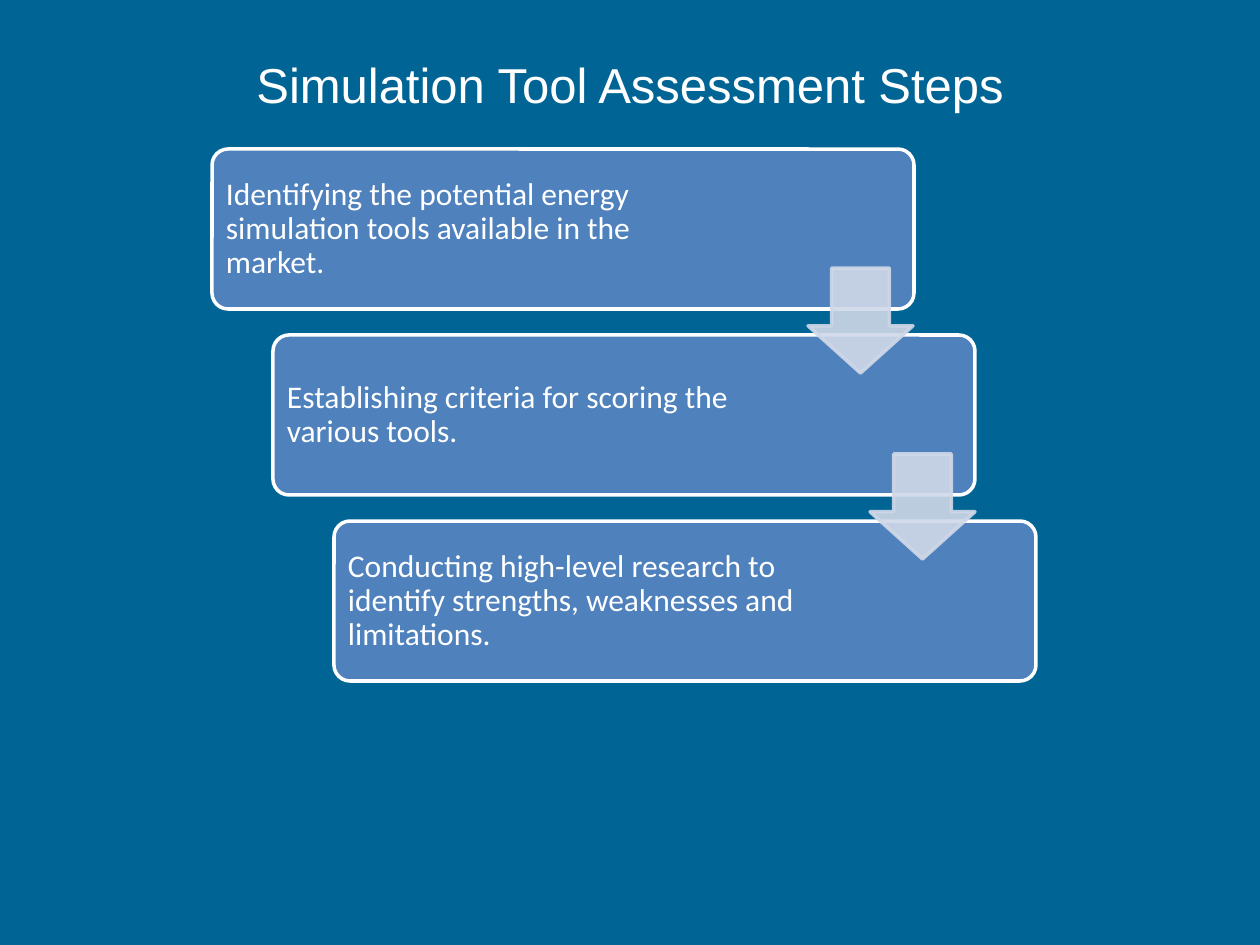
from pptx import Presentation
from pptx.dml.color import RGBColor
from pptx.enum.shapes import MSO_SHAPE as Shape
from pptx.enum.text import MSO_ANCHOR as Anchor, PP_ALIGN as Align
from pptx.oxml.ns import qn
from pptx.util import Pt
from lxml.etree import SubElement

SCALE = 914400 / 126
STEPS = [
    "Identifying the potential energy simulation tools available in the market.",
    "Establishing criteria for scoring the various tools.",
    "Conducting high-level research to identify strengths, weaknesses and limitations.",
]


def px(*lengths):
    return [round(length * SCALE) for length in lengths]


def color(value):
    return RGBColor.from_string(value)


class StepSlide:
    """Style of the staircase slide and the page it is drawn on."""

    BACK, CARD, WHITE, ARROW = "006595", "4F81BD", "FFFFFF", "D0D8E8"

    def __init__(self, deck):
        self.page = deck.slides.add_slide(deck.slide_layouts[5])
        fill = self.page.background.fill
        fill.solid()
        fill.fore_color.rgb = color(self.BACK)

    def set_text(self, frame, text, font, size, margins):
        frame.word_wrap = True
        (frame.margin_left, frame.margin_top,
         frame.margin_right, frame.margin_bottom) = px(*margins)
        para = frame.paragraphs[0]
        para.text = text
        para.font.name, para.font.size = font, Pt(size)
        para.font.color.rgb = color(self.WHITE)
        return para

    def title(self, text, *bounds):
        box = self.page.shapes.title
        box.left, box.top, box.width, box.height = px(*bounds)
        frame = box.text_frame
        frame.vertical_anchor = Anchor.TOP
        para = self.set_text(frame, text, "Arial", 28, (13, 12, 13, 6))
        para.alignment = Align.CENTER

    def shape(self, kind, bounds, adjustments, fill, line, alpha=100):
        shape = self.page.shapes.add_shape(kind, *px(*bounds))
        shape.shadow.inherit = False
        for index, value in enumerate(adjustments):
            shape.adjustments[index] = value
        shape.line.width = Pt(2)
        for paint, value in ((shape.fill, fill), (shape.line.fill, line)):
            paint.solid()
            paint.fore_color.rgb = color(value)
        if alpha < 100:
            for solid in shape.element.spPr.iter(qn("a:solidFill")):
                SubElement(solid[0], qn("a:alpha"), val=str(alpha * 1000))

    def card(self, text, left, top):
        self.shape(Shape.ROUNDED_RECTANGLE, (left, top, 702, 160), [0.1],
                   self.CARD, self.WHITE)
        box = self.page.shapes.add_textbox(*px(left + 5, top + 5, 528, 151))
        box.text_frame.vertical_anchor = Anchor.MIDDLE
        para = self.set_text(box.text_frame, text, "Calibri", 18, (9, 9, 9, 9))
        para.line_spacing = 0.9

    def arrow(self, left, top):
        self.shape(Shape.DOWN_ARROW, (left, top, 105, 105), [0.55, 0.45],
                   self.ARROW, self.ARROW, 90)


def main():
    deck = Presentation()
    deck.slide_width, deck.slide_height = px(1260, 945)
    slide = StepSlide(deck)
    slide.title("Simulation Tool Assessment Steps", 63, 42, 1134, 105)
    for index, text in enumerate(STEPS):
        slide.card(text, 212 + 61 * index, 149 + 186 * index)
    for index in range(len(STEPS) - 1):
        slide.arrow(808 + 62 * index, 268 + 186 * index)
    deck.save("out.pptx")


if __name__ == "__main__":
    main()
